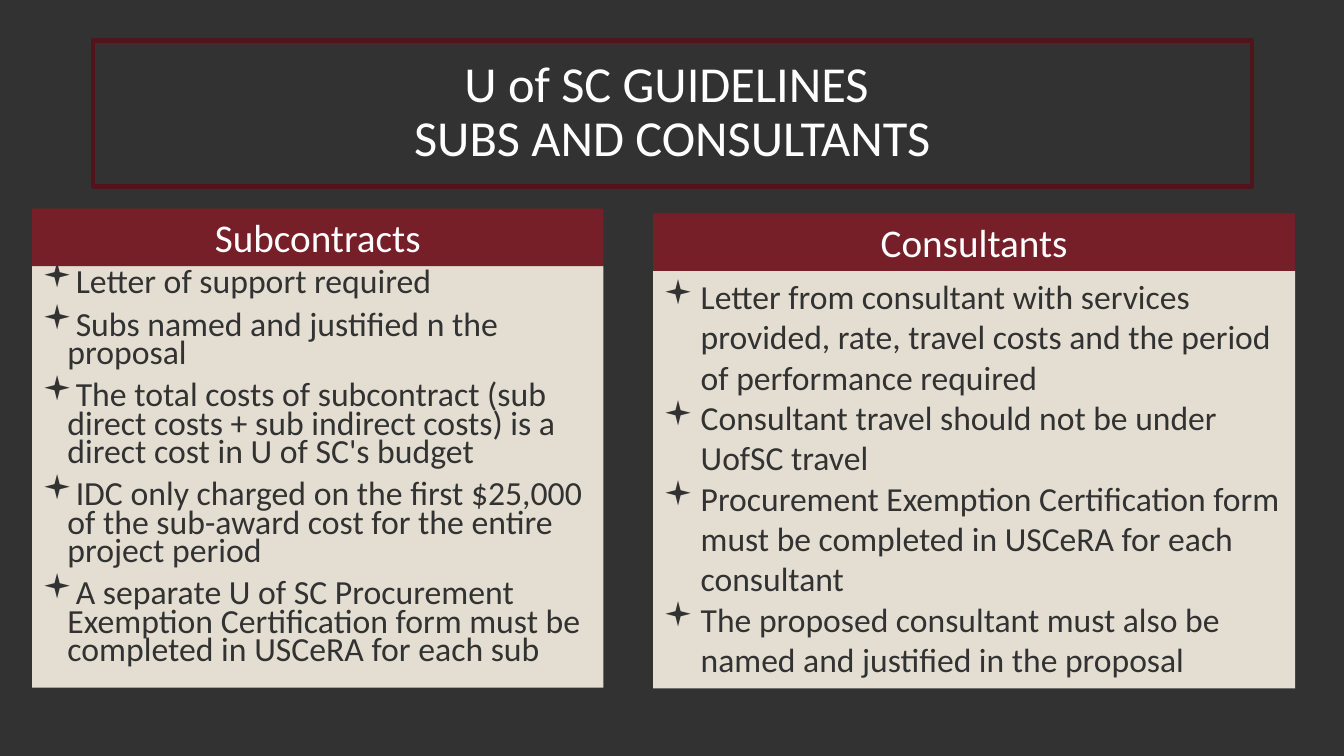
from lxml import etree
from pptx import Presentation, util as u
from pptx.dml.color import RGBColor
from pptx.enum import shapes, text
from pptx.oxml.ns import qn

FONT = "Calibri"
DARK, LIGHT, GARNET, CREAM, EDGE = "323232", "FFFFFF", "771F28", "E3DED1", "50141B"
TITLE = "U of SC GUIDELINES \vSUBS AND CONSULTANTS"
TITLE_PLACE = (2.34, 1.02, 29.21, 3.68)
HEADER_HEIGHT = 1.45

PANELS = [
    {
        "heading": "Subcontracts",
        "left": 0.81, "top": 5.26, "width": 14.4, "body_height": 10.62,
        "size": 24.1, "indent": 0.64, "line_spacing": 0.7, "gap": 10,
        "items": [
            "Letter of support required",
            "Subs named and justified n the proposal",
            "The total costs of subcontract (sub direct costs + sub indirect costs) is a direct cost in U of SC's budget",
            "IDC only charged on the first $25,000 of the sub-award cost for the entire project period",
            "A separate U of SC Procurement Exemption Certification form must be completed in USCeRA for each sub",
        ],
    },
    {
        "heading": "Consultants",
        "left": 16.46, "top": 5.38, "width": 16.18, "body_height": 10.52,
        "size": 24, "indent": 0.95, "line_spacing": 1.0, "gap": 0,
        "items": [
            "Letter from consultant with services provided, rate, travel costs and the period of performance required",
            "Consultant travel should not be under UofSC travel",
            "Procurement Exemption Certification form must be completed in USCeRA for each consultant",
            "The proposed consultant must also be named and justified in the proposal",
        ],
    },
]


def color(value):
    return RGBColor.from_string(value)


def add_box(page, place, fill=None, line=None, anchor=text.MSO_ANCHOR.TOP):
    box = page.shapes.add_shape(shapes.MSO_SHAPE.RECTANGLE, *map(u.Cm, place))
    box.shadow.inherit = False
    if fill:
        box.fill.solid()
        box.fill.fore_color.rgb = color(fill)
    else:
        box.fill.background()
    if line:
        box.line.color.rgb = color(line)
        box.line.width = u.Pt(3)
    else:
        box.line.fill.background()
    box.text_frame.word_wrap = True
    box.text_frame.vertical_anchor = anchor
    return box.text_frame


def add_bullet(para, indent):
    properties = para._p.get_or_add_pPr()
    properties.set("marL", str(u.Cm(indent)))
    properties.set("indent", str(-u.Cm(indent)))
    etree.SubElement(properties, qn("a:buFont")).set("typeface", "Wingdings")
    etree.SubElement(properties, qn("a:buChar")).set("char", "▪")


def write(frame, lines, size, ink, align, indent=0, spacing=1.0, gap=0):
    for index, line in enumerate(lines):
        para = frame.paragraphs[0] if index == 0 else frame.add_paragraph()
        para.text = line
        if indent:
            add_bullet(para, indent)
        layout = {"alignment": align, "line_spacing": spacing,
                  "space_before": u.Pt(gap if index else 0)}
        for name, value in layout.items():
            setattr(para, name, value)
        for name, value in {"name": FONT, "size": u.Pt(size)}.items():
            setattr(para.font, name, value)
        para.font.color.rgb = color(ink)


def main():
    deck = Presentation()
    deck.slide_width, deck.slide_height = u.Cm(33.87), u.Cm(19.05)
    page = deck.slides.add_slide(deck.slide_layouts[6])
    page.background.fill.solid()
    page.background.fill.fore_color.rgb = color(DARK)
    center, left = text.PP_ALIGN.CENTER, text.PP_ALIGN.LEFT

    title = add_box(page, TITLE_PLACE, line=EDGE, anchor=text.MSO_ANCHOR.MIDDLE)
    write(title, [TITLE], 36, LIGHT, center, spacing=0.9)

    for panel in PANELS:
        x, y, width = panel["left"], panel["top"], panel["width"]
        body = add_box(page, (x, y + HEADER_HEIGHT, width, panel["body_height"]), CREAM)
        write(body, panel["items"], panel["size"], DARK, left,
              panel["indent"], panel["line_spacing"], panel["gap"])
        header = add_box(page, (x, y, width, HEADER_HEIGHT), GARNET)
        write(header, [panel["heading"]], 28, LIGHT, center)

    deck.save("out.pptx")


if __name__ == "__main__":
    main()
